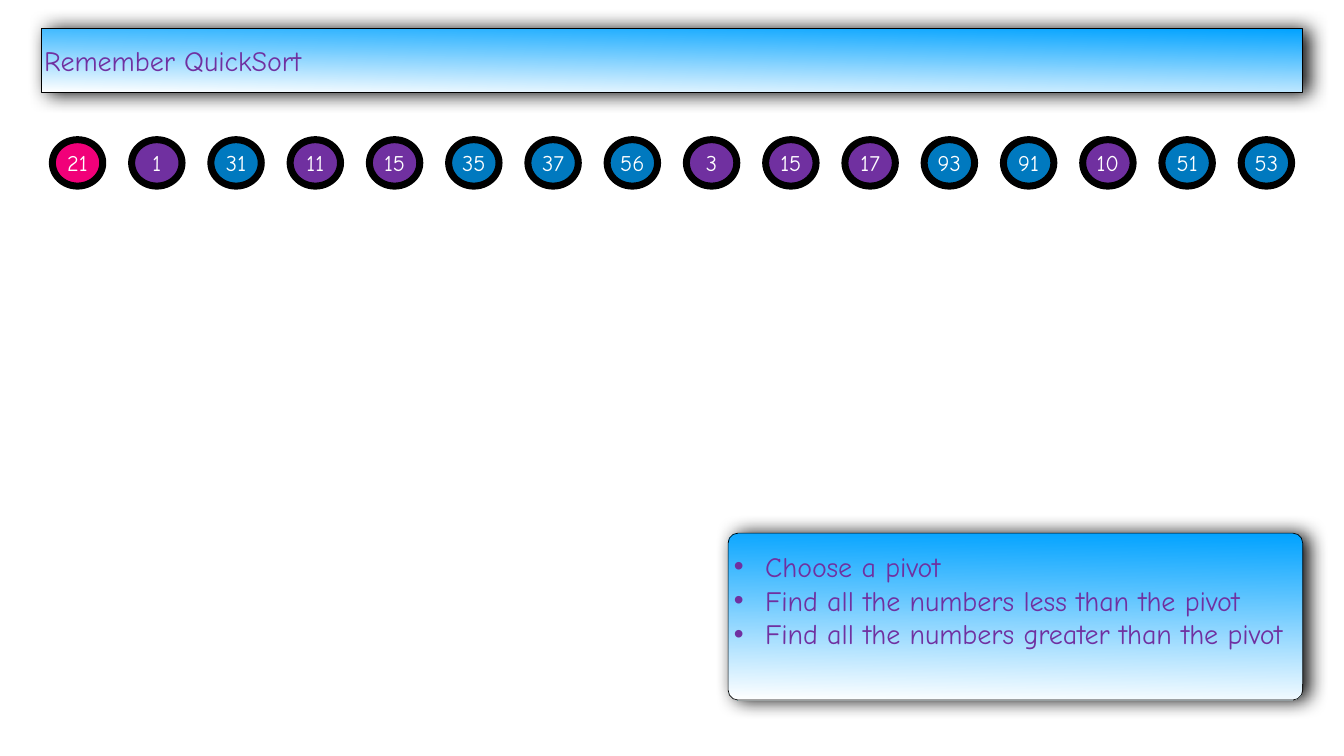
import lxml.etree
import pptx
import pptx.dml.color
import pptx.enum.shapes
import pptx.enum.text
import pptx.oxml
import pptx.oxml.ns
import pptx.util

Cm = pptx.util.Cm
Pt = pptx.util.Pt
ALIGN = pptx.enum.text.PP_ALIGN

FONT = "Comic Neue"
PURPLE, BLUE, PINK = "7030A0", "0079BF", "F10079"
SKY, WHITE, BLACK = "00A2FF", "FFFFFF", "000000"

NUMBERS = [21, 1, 31, 11, 15, 35, 37, 56, 3, 15, 17, 93, 91, 10, 51, 53]
STEPS = [
    "Choose a pivot",
    "Find all the numbers less than the pivot",
    "Find all the numbers greater than the pivot",
]
FIRST_LEFT, LAST_LEFT = 2.64, 62.56
INSET = 0.15


def color(value):
    return pptx.dml.color.RGBColor.from_string(value)


def apply(target, values):
    for name, value in values.items():
        setattr(target, name, value)


def add_child(parent, tag, **attributes):
    child = lxml.etree.SubElement(parent, pptx.oxml.ns.qn(tag))
    for name, value in attributes.items():
        child.set(name, str(value))
    return child


def set_outline(shape, width):
    shape.line.color.rgb = color(BLACK)
    shape.line.width = Pt(width)


def write_text(shape, lines, size, text_color, alignment, bottom_inset=INSET):
    frame = shape.text_frame
    frame.text = "\n".join(lines)
    apply(frame, {
        "word_wrap": True,
        "auto_size": pptx.enum.text.MSO_AUTO_SIZE.NONE,
        "vertical_anchor": pptx.enum.text.MSO_ANCHOR.MIDDLE,
        "margin_left": Cm(INSET),
        "margin_top": Cm(INSET),
        "margin_right": Cm(INSET),
        "margin_bottom": Cm(bottom_inset),
    })
    for paragraph in frame.paragraphs:
        apply(paragraph, {"alignment": alignment, "space_before": Pt(0), "line_spacing": 1.0})
        font = paragraph.runs[0].font
        apply(font, {"name": FONT, "size": Pt(size)})
        font.color.rgb = color(text_color)


def style_panel(shape, left, top, width, height):
    """Turn a placeholder into a rounded gradient panel with a shadow."""
    apply(shape, {"left": Cm(left), "top": Cm(top), "width": Cm(width), "height": Cm(height)})
    properties = shape.element.spPr
    geometry = add_child(properties, "a:prstGeom", prst="roundRect")
    add_child(add_child(geometry, "a:avLst"), "a:gd", name="adj", fmla="val 5900")

    shape.fill.gradient()
    shape.fill.gradient_angle = 269
    for stop, value in zip(shape.fill.gradient_stops, (SKY, WHITE)):
        stop.color.rgb = color(value)
    set_outline(shape, 1)

    effects = add_child(properties, "a:effectLst")
    shadow = add_child(effects, "a:outerShdw", blurRad=Pt(28), dist=Pt(9), dir=0, rotWithShape=0)
    shadow_color = add_child(shadow, "a:srgbClr", val=BLACK)
    add_child(shadow_color, "a:alpha", val=97000)


def add_bullets(shape):
    for paragraph in shape.text_frame.paragraphs:
        properties = paragraph._p.get_or_add_pPr()
        properties.set("marL", str(Cm(1.57)))
        properties.set("indent", str(-Cm(1.57)))
        add_child(properties, "a:buFont", typeface="Arial")
        add_child(properties, "a:buChar", char="•")


def number_color(index, number, pivot):
    if index == 0:
        return PINK
    return PURPLE if number < pivot else BLUE


def add_number(slide, left, number, fill):
    shape = slide.shapes.add_shape(
        pptx.enum.shapes.MSO_SHAPE.OVAL, Cm(left), Cm(7.04), Cm(2.54), Cm(2.34))
    shape.shadow.inherit = False
    shape.fill.solid()
    shape.fill.fore_color.rgb = color(fill)
    set_outline(shape, 10)
    write_text(shape, [str(number)], 32, WHITE, ALIGN.CENTER)


def main():
    presentation = pptx.Presentation()
    presentation.slide_width = Cm(67.74)
    presentation.slide_height = Cm(38.1)
    slide = presentation.slides.add_slide(presentation.slide_layouts[1])

    title = slide.shapes.title
    style_panel(title, 2.08, 1.42, 63.58, 3.23)
    write_text(title, ["Remember QuickSort"], 40, PURPLE, ALIGN.LEFT)

    step = (LAST_LEFT - FIRST_LEFT) / (len(NUMBERS) - 1)
    for index, number in enumerate(NUMBERS):
        fill = number_color(index, number, NUMBERS[0])
        add_number(slide, FIRST_LEFT + index * step, number, fill)

    body = slide.placeholders[1]
    style_panel(body, 36.7, 26.87, 28.96, 8.41)
    write_text(body, STEPS, 40, PURPLE, ALIGN.LEFT, bottom_inset=1.83)
    add_bullets(body)

    presentation.save("out.pptx")


if __name__ == "__main__":
    main()
